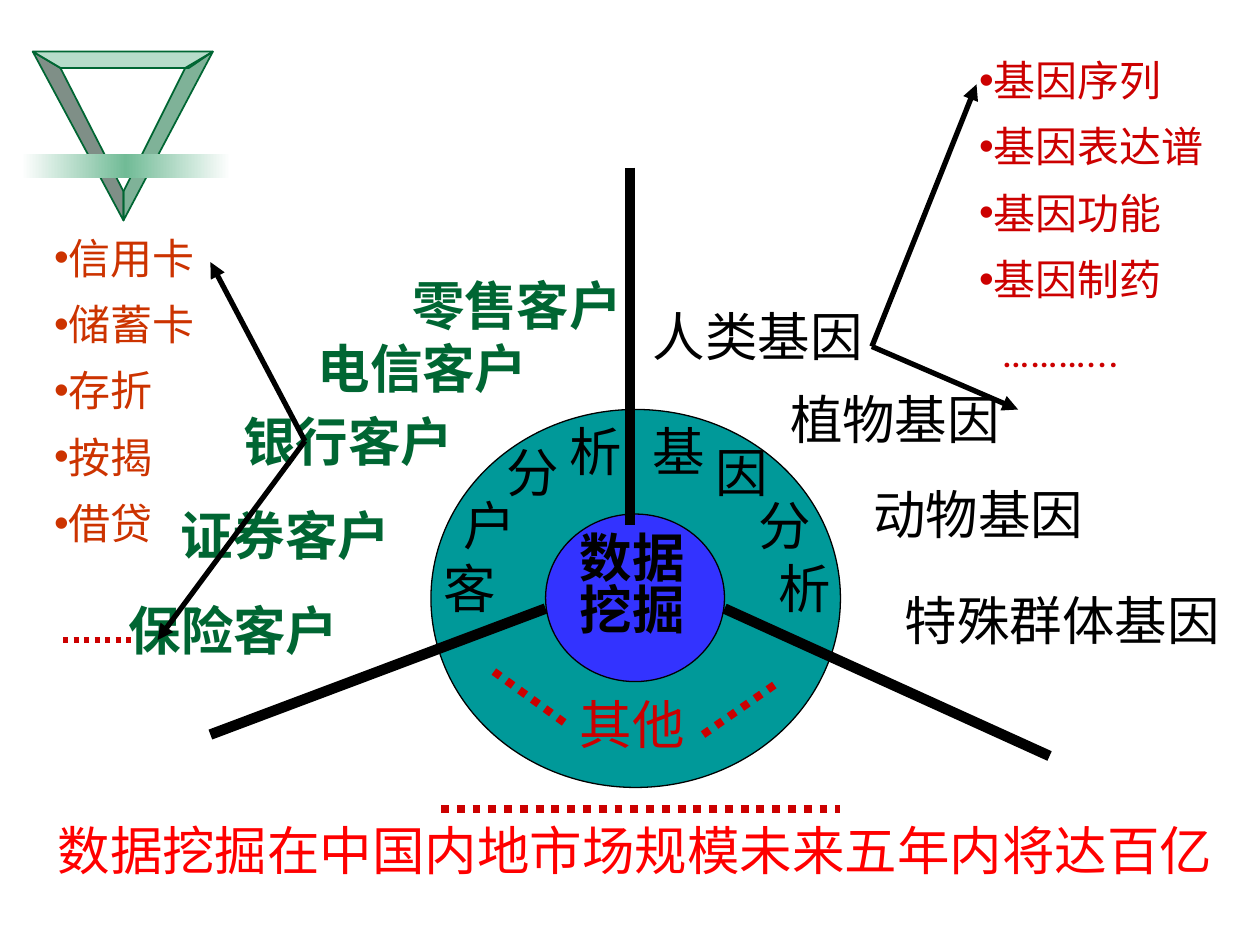
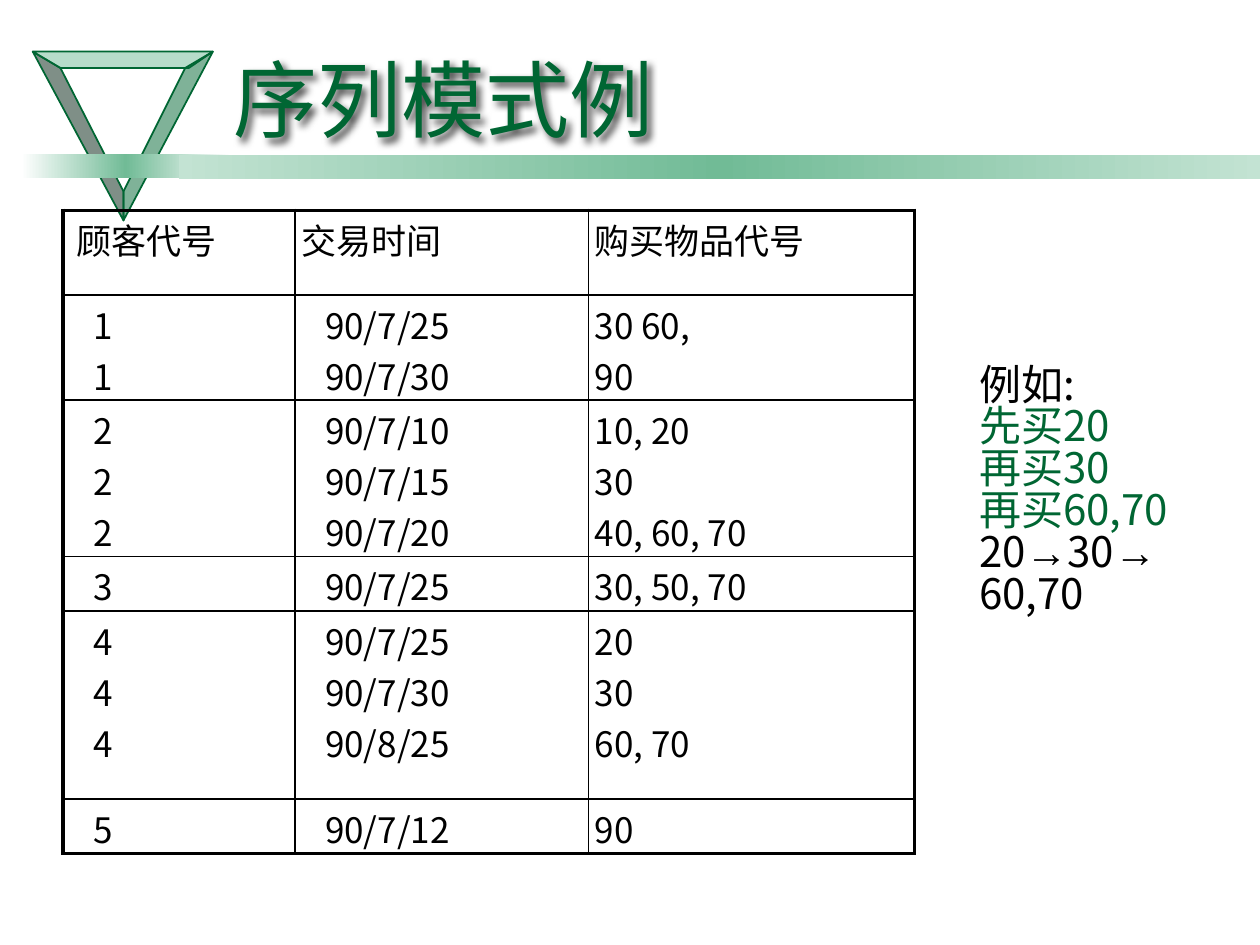
from dataclasses import dataclass
from lxml import etree
from pptx import Presentation
from pptx.dml.color import RGBColor
from pptx.enum.dml import MSO_LINE
from pptx.enum.shapes import MSO_CONNECTOR, MSO_SHAPE
from pptx.enum.text import MSO_ANCHOR, MSO_AUTO_SIZE, PP_ALIGN
from pptx.oxml.ns import qn
from pptx.util import Inches, Pt

STRAIGHT = MSO_CONNECTOR.STRAIGHT
OVAL, RECTANGLE = MSO_SHAPE.OVAL, MSO_SHAPE.RECTANGLE
LEFT, CENTER = PP_ALIGN.LEFT, PP_ALIGN.CENTER
TOP, MIDDLE = MSO_ANCHOR.TOP, MSO_ANCHOR.MIDDLE
DOTTED = MSO_LINE.ROUND_DOT
NO_AUTOFIT = MSO_AUTO_SIZE.NONE


@dataclass(frozen=True)
class Theme:
    font: str = "Noto Sans CJK SC"
    dots_font: str = "Roboto"
    arrow_font: str = "Arial"
    black: str = "000000"
    white: str = "FFFFFF"
    green: str = "006633"
    mint: str = "71BB96"
    pale_mint: str = "C3E3D3"
    dark_green: str = "002010"
    teal: str = "009999"
    blue: str = "3333FF"
    red: str = "CC0000"
    bright_red: str = "FF0000"
    orange: str = "CC3300"
    title_size: int = 48
    label_size: int = 30
    list_size: int = 24
    table_size: int = 20
    tight: float = 0.83
    list_gap: int = 14
    inset: float = 0.05
    top_inset: float = 0.08


THEME = Theme()

EMBLEM = [
    ([(0.98, 1.75), (0.98, 1.52), (0.48, 0.54), (0.26, 0.41)], THEME.dark_green),
    ([(0.26, 0.41), (0.48, 0.54), (1.5, 0.54), (1.69, 0.41)], THEME.mint),
    ([(0.98, 1.75), (0.98, 1.52), (1.47, 0.54), (1.69, 0.41)], THEME.green),
]
EMBLEM_BAND = (0.17, 1.22, 1.66, 0.19)
TITLE_BAND = (1.42, 1.23, 8.58, 0.19)

CORE = "数据挖掘"
STATEMENT = "数据挖掘在中国内地市场规模未来五年内将达百亿"
RING_PLACES = [(3.47, 4.42), (3.63, 3.92), (3.97, 3.5), (4.47, 3.33)]
RING_MIRROR = 9.6
RING_LEFT, RING_RIGHT, RING_BOTTOM = "客户分析", "析分因基", "其他"
CUSTOMERS = [
    ("保险客户", 0.97, 4.75), ("证券客户", 1.38, 4), ("银行客户", 1.88, 3.25),
    ("电信客户", 2.47, 2.67), ("零售客户", 3.22, 2.17),
]
GENES = [
    ("人类基因", 5.13, 2.42), ("植物基因", 6.22, 3.08),
    ("动物基因", 6.88, 3.83), ("特殊群体基因", 7.13, 4.67),
]
BANK_PRODUCTS = ["信用卡", "储蓄卡", "存折", "按揭", "借贷"]
GENE_TOPICS = [
    "基因序列", "基因表达谱", "基因功能", "基因制药",
    {"runs": [("………...", {"font": THEME.dots_font})],
     "bullet": None, "indent": 0.18, "before": 17},
]
SPOKES = [(5, 1.33, 5, 4.17), (1.67, 5.83, 4.33, 4.83), (5.75, 4.83, 8.33, 6)]
RING_DOTS = [(3.92, 5.33, 4.5, 5.75), (5.58, 5.83, 6.17, 5.42), (3.5, 6.42, 6.67, 6.42)]
LIST_DOTS = (0.5, 5.08, 1.08, 5.08)
BRANCHES = {
    (2.42, 3.5): [(1.67, 2.08), (1.25, 5.08)],
    (6.92, 2.75): [(8.08, 3.25), (7.75, 0.67)],
}

SEQUENCE_TITLE = "序列模式例"
PURCHASES = [
    (["顾客代号"], ["交易时间"], ["购买物品代号"]),
    (["1", "1"], ["90/7/25", "90/7/30"], ["30 60,", "90"]),
    (["2", "2", "2"], ["90/7/10", "90/7/15", "90/7/20"], ["10, 20", "30", "40, 60, 70"]),
    (["3"], ["90/7/25"], ["30, 50, 70"]),
    (["4", "4", "4"], ["90/7/25", "90/7/30", "90/8/25"], ["20", "30", "60, 70"]),
    (["5"], ["90/7/12"], ["90"]),
]
COLUMN_WIDTHS = [1.84, 2.33, 2.59]
ROW_HEIGHTS = [0.67, 0.83, 1.23, 0.43, 1.49, 0.43]
HEADER_INDENTS, BODY_INDENTS = [0.06, 0, 0], [0.19, 0.19, 0]
ARROW = {"font": THEME.arrow_font}
EXAMPLE = [
    "例如:",
    *({"runs": [(text, {"color": THEME.green})]} for text in ("先买20", "再买30", "再买60,70")),
    {"runs": [("20", {}), ("→", ARROW), ("30", {}), ("→ ", ARROW), ("60,70", {})]},
]


def child(parent, tag, **attributes):
    return etree.SubElement(parent, qn(tag), {key: str(value) for key, value in attributes.items()})


def inches(values):
    return [Inches(value) for value in values]


def set_bullet(paragraph, bullet, indent):
    properties = paragraph._p.get_or_add_pPr()
    properties.set("marL", str(Inches(indent)))
    properties.set("indent", "0")
    if bullet:
        child(properties, "a:buFont", typeface=THEME.arrow_font)
        child(properties, "a:buChar", char=bullet)
    else:
        child(properties, "a:buNone")


def write(frame, items, size=THEME.label_size, color=THEME.black, font=THEME.font, bold=False,
          align=LEFT, spacing=THEME.tight, before=0, bullet=None, indent=0):
    for index, item in enumerate(items):
        paragraph = frame.paragraphs[0] if index == 0 else frame.add_paragraph()
        settings = item if isinstance(item, dict) else {"runs": [(item, {})]}
        set_bullet(paragraph, settings.get("bullet", bullet), settings.get("indent", indent))
        paragraph.alignment = align
        paragraph.line_spacing = spacing
        paragraph.space_before = Pt(settings.get("before", before) if index else 0)
        for text, changes in settings["runs"]:
            run = paragraph.add_run()
            run.text = text
            run.font.size = Pt(size)
            run.font.bold = bold
            run.font.color.rgb = RGBColor.from_string(changes.get("color", color))
            run.font.name = changes.get("font", font)
            child(run._r.get_or_add_rPr(), "a:ea", typeface=run.font.name)


def place_text(shape, box, items, anchor=TOP, top_inset=THEME.top_inset, **text_format):
    shape.left, shape.top, shape.width, shape.height = inches(box)
    frame = shape.text_frame
    frame.auto_size = NO_AUTOFIT
    frame.word_wrap = True
    frame.vertical_anchor = anchor
    frame.margin_left = frame.margin_right = frame.margin_bottom = Inches(THEME.inset)
    frame.margin_top = Inches(top_inset)
    write(frame, items, **text_format)


def add_text(slide, box, items, **text_format):
    place_text(slide.shapes.add_textbox(*inches(box)), box, items, **text_format)


def add_line(slide, ends, width, color=THEME.black, dotted=False, arrow=False):
    connector = slide.shapes.add_connector(STRAIGHT, *inches(ends))
    connector.line.width = Pt(width)
    connector.line.color.rgb = RGBColor.from_string(color)
    if dotted:
        connector.line.dash_style = DOTTED
    if arrow:
        child(connector.line._get_or_add_ln(), "a:tailEnd", type="triangle")
    child(connector._element.spPr, "a:effectLst")


def paint(shape, fill, line=None, width=1):
    shape.shadow.inherit = False
    shape.fill.solid()
    shape.fill.fore_color.rgb = RGBColor.from_string(fill)
    if line:
        shape.line.color.rgb = RGBColor.from_string(line)
        shape.line.width = Pt(width)
    else:
        shape.line.fill.background()


def add_band(slide, box, edge):
    band = slide.shapes.add_shape(RECTANGLE, *inches(box))
    paint(band, edge)
    solid = band._element.spPr.find(qn("a:solidFill"))
    gradient = etree.Element(qn("a:gradFill"), rotWithShape="1")
    stops = child(gradient, "a:gsLst")
    for position, color in ((0, edge), (50000, THEME.mint), (100000, edge)):
        child(child(stops, "a:gs", pos=position), "a:srgbClr", val=color)
    child(gradient, "a:lin", ang=0, scaled=0)
    solid.getparent().replace(solid, gradient)


def add_emblem(slide):
    for points, color in EMBLEM:
        start, *others = [tuple(inches(point)) for point in points]
        builder = slide.shapes.build_freeform(*start, scale=1.0)
        builder.add_line_segments(others, close=True)
        side = builder.convert_to_shape()
        paint(side, color, THEME.green)
        fill_color = side._element.spPr.find(qn("a:solidFill"))[0]
        child(fill_color, "a:alpha", val=50000)
    add_band(slide, EMBLEM_BAND, THEME.white)


def set_borders(cell, row, column):
    properties = cell._tc.get_or_add_tcPr()
    outer_edges = {
        "a:lnL": column == 0, "a:lnR": column == len(COLUMN_WIDTHS) - 1,
        "a:lnT": row == 0, "a:lnB": row == len(ROW_HEIGHTS) - 1,
    }
    for tag, outer in outer_edges.items():
        border = child(properties, tag, w=Pt(2.25 if outer else 1))
        child(child(border, "a:solidFill"), "a:srgbClr", val=THEME.black)


def add_purchases(slide):
    box = (0.5, 1.67, sum(COLUMN_WIDTHS), sum(ROW_HEIGHTS))
    table = slide.shapes.add_table(len(ROW_HEIGHTS), len(COLUMN_WIDTHS), *inches(box)).table
    table.first_row = table.horz_banding = False
    for column, width in zip(table.columns, COLUMN_WIDTHS):
        column.width = Inches(width)
    for row_index, (height, values) in enumerate(zip(ROW_HEIGHTS, PURCHASES)):
        table.rows[row_index].height = Inches(height)
        indents = BODY_INDENTS if row_index else HEADER_INDENTS
        for column_index, lines in enumerate(values):
            cell = table.cell(row_index, column_index)
            cell.margin_left = cell.margin_right = Inches(THEME.inset)
            cell.margin_top, cell.margin_bottom = Inches(0.03), 0
            set_borders(cell, row_index, column_index)
            cell.fill.background()
            write(cell.text_frame, lines, size=THEME.table_size, spacing=1.0,
                  indent=indents[column_index])


def build_market(presentation):
    slide = presentation.slides.add_slide(presentation.slide_layouts[3])
    add_emblem(slide)
    for box, color in (((3.42, 3.25, 3.25, 3), THEME.teal), ((4.33, 4.08, 1.42, 1.33), THEME.blue)):
        paint(slide.shapes.add_shape(OVAL, *inches(box)), color, THEME.black, 0.75)
    add_text(slide, (4.55, 4.17, 0.98, 1.27), [CORE], bold=True)
    for spoke in SPOKES:
        add_line(slide, spoke, 6)
    for left_word, right_word, (left, top) in zip(RING_LEFT, RING_RIGHT, RING_PLACES):
        add_text(slide, (left, top, 0.57, 0.68), [left_word])
        add_text(slide, (RING_MIRROR - left, top, 0.57, 0.68), [right_word])
    add_text(slide, (4.55, 5.5, 1.07, 0.68), [RING_BOTTOM], color=THEME.red)
    for dots in RING_DOTS:
        add_line(slide, dots, 4.5, THEME.red, dotted=True)
    for name, left, top in CUSTOMERS:
        add_text(slide, (left, top, 1.82, 0.68), [name], color=THEME.green, bold=True)
    for name, left, top in GENES:
        add_text(slide, (left, top, 2.9 if len(name) > 4 else 1.98, 0.68), [name])
    title, products, topics = slide.placeholders
    list_format = {"size": THEME.list_size, "before": THEME.list_gap, "bullet": "•"}
    place_text(products, (0.38, 1.83, 1.65, 3.19), BANK_PRODUCTS, color=THEME.orange, **list_format)
    place_text(topics, (7.72, 0.42, 1.98, 3.14), GENE_TOPICS, color=THEME.red, **list_format)
    add_line(slide, LIST_DOTS, 3, THEME.red, dotted=True)
    for start, targets in BRANCHES.items():
        for target in targets:
            add_line(slide, start + target, 3, arrow=True)
    place_text(title, (0.38, 6.5, 9.32, 0.68), [STATEMENT], color=THEME.bright_red, align=CENTER)


def build_sequence(presentation):
    slide = presentation.slides.add_slide(presentation.slide_layouts[5])
    add_emblem(slide)
    title = slide.shapes.title
    place_text(title, (1.8, 0.26, 5.98, 1.03), [SEQUENCE_TITLE], anchor=MIDDLE,
               top_inset=THEME.inset, size=THEME.title_size, color=THEME.green, spacing=1.0)
    effects = child(title._element.spPr, "a:effectLst")
    shadow = child(effects, "a:outerShdw", blurRad=Pt(4), dist=Pt(3), dir=2700000)
    child(child(shadow, "a:srgbClr", val=THEME.black), "a:alpha", val=70000)
    add_band(slide, TITLE_BAND, THEME.pale_mint)
    add_purchases(slide)
    add_text(slide, (7.72, 2.83, 1.65, 2.74), EXAMPLE, size=THEME.list_size)


def main():
    presentation = Presentation()
    presentation.slide_width, presentation.slide_height = Inches(10), Inches(7.5)
    build_market(presentation)
    build_sequence(presentation)
    presentation.save("out.pptx")


if __name__ == "__main__":
    main()
